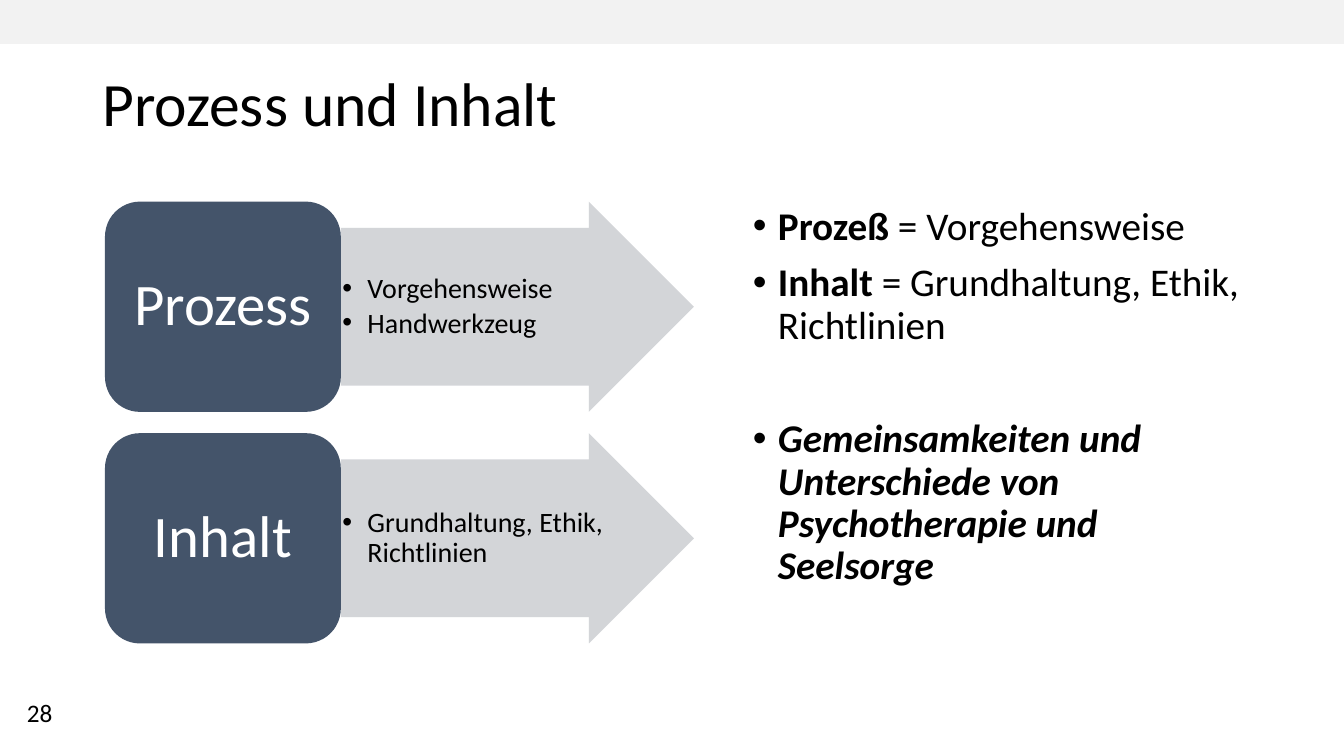
from lxml.etree import SubElement
from pptx import Presentation
from pptx.dml.color import RGBColor
from pptx.enum.shapes import MSO_SHAPE as SHAPE
from pptx.enum.text import MSO_ANCHOR as ANCHOR, MSO_AUTO_SIZE as AUTO_SIZE, PP_ALIGN as ALIGN
from pptx.oxml.ns import qn
from pptx.util import Pt

BLACK = RGBColor(0x00, 0x00, 0x00)
WHITE = RGBColor(0xFF, 0xFF, 0xFF)
STRIP_GREY = RGBColor(0xF2, 0xF2, 0xF2)
ARROW_GREY = RGBColor(0xCF, 0xD1, 0xD4)
SLATE = RGBColor(0x44, 0x54, 0x6A)

SLIDE_WIDTH, SLIDE_HEIGHT = 960, 540
BOX_LEFT, BOX_WIDTH = 75, 168.5
ARROW_LEFT, ARROW_WIDTH = BOX_LEFT + BOX_WIDTH, 252.2
FIRST_ROW, ROW_HEIGHT, ROW_PITCH = 144, 150.2, 165.4


def add_filled(kind, left, top, width, height, color):
    shape = slide.shapes.add_shape(kind, Pt(left), Pt(top), Pt(width), Pt(height))
    shape.shadow.inherit = False
    shape.fill.solid()
    shape.fill.fore_color.rgb = color
    shape.line.fill.background()
    return shape


def write(paragraph, runs, size, color=BLACK, bullet=False, before=0, align=ALIGN.LEFT):
    """Fill a paragraph with (text, font values) runs."""
    if bullet:
        properties = paragraph._p.get_or_add_pPr()
        properties.set("marL", str(Pt(18)))
        properties.set("indent", str(-Pt(18)))
        SubElement(properties, qn("a:buFont")).set("typeface", "Arial")
        SubElement(properties, qn("a:buChar")).set("char", "•")
    paragraph.alignment = align
    paragraph.line_spacing = 0.9
    paragraph.space_before = Pt(before)
    for text, extra in runs:
        run = paragraph.add_run()
        run.text = text
        values = {"name": "Calibri", "size": Pt(size), **extra}
        for name, value in values.items():
            setattr(run.font, name, value)
        run.font.color.rgb = color


prs = Presentation()
prs.slide_width, prs.slide_height = Pt(SLIDE_WIDTH), Pt(SLIDE_HEIGHT)
slide = prs.slides.add_slide(prs.slide_layouts[1])

add_filled(SHAPE.RECTANGLE, 0, 0, SLIDE_WIDTH, 31.4, STRIP_GREY)

# Title and definitions
title, definitions = slide.placeholders
for placeholder, bounds, anchor in [
    (title, (66, 35.3, 828, 81.4), ANCHOR.MIDDLE),
    (definitions, (530.5, 144, 363.5, 342.7), ANCHOR.TOP),
]:
    for side, value in zip(("left", "top", "width", "height"), bounds):
        setattr(placeholder, side, Pt(value))
    placeholder.text_frame.auto_size = AUTO_SIZE.NONE
    placeholder.text_frame.vertical_anchor = anchor

write(title.text_frame.paragraphs[0], [("Prozess und Inhalt", {})], 44)

statements = [
    (0, [("Prozeß", {"bold": True}), (" = Vorgehensweise", {})]),
    (10, [("Inhalt", {"bold": True}), (" = Grundhaltung, Ethik, Richtlinien", {})]),
    (50.8, [("Gemeinsamkeiten und Unterschiede von Psychotherapie und Seelsorge",
             {"bold": True, "italic": True})]),
]
frame = definitions.text_frame
for i, (before, runs) in enumerate(statements):
    paragraph = frame.add_paragraph() if i else frame.paragraphs[0]
    write(paragraph, runs, 28, bullet=True, before=before)

# One row per concept: a box and the arrow that explains it
concepts = [
    ("Prozess", ["Vorgehensweise", "Handwerkzeug"]),
    ("Inhalt", ["Grundhaltung, Ethik, Richtlinien"]),
]
for row, (concept, details) in enumerate(concepts):
    top = FIRST_ROW + row * ROW_PITCH
    arrow = add_filled(SHAPE.RIGHT_ARROW, ARROW_LEFT, top, ARROW_WIDTH, ROW_HEIGHT, ARROW_GREY)
    arrow.adjustments[0] = 0.75
    arrow.adjustments[1] = 0.5
    arrow_color = next(arrow.element.spPr.iter(qn("a:srgbClr")))
    SubElement(arrow_color, qn("a:alpha")).set("val", "90000")
    box = add_filled(SHAPE.ROUNDED_RECTANGLE, BOX_LEFT, top, BOX_WIDTH, ROW_HEIGHT, SLATE)

    for shape, margin in ((arrow, 1), (box, 0)):
        frame = shape.text_frame
        frame.word_wrap = True
        frame.vertical_anchor = ANCHOR.MIDDLE
        for side in ("left", "top", "right", "bottom"):
            setattr(frame, f"margin_{side}", Pt(margin))

    write(box.text_frame.paragraphs[0], [(concept, {})], 42, WHITE, align=ALIGN.CENTER)
    for i, detail in enumerate(details):
        frame = arrow.text_frame
        paragraph = frame.add_paragraph() if i else frame.paragraphs[0]
        write(paragraph, [(detail, {})], 20, bullet=True, before=3 if i else 0)

page_number = slide.shapes.add_textbox(Pt(12.2), Pt(496.8), Pt(216), Pt(29))
page_number.text_frame.word_wrap = True
write(page_number.text_frame.paragraphs[0], [("28", {})], 18)

prs.save("out.pptx")
